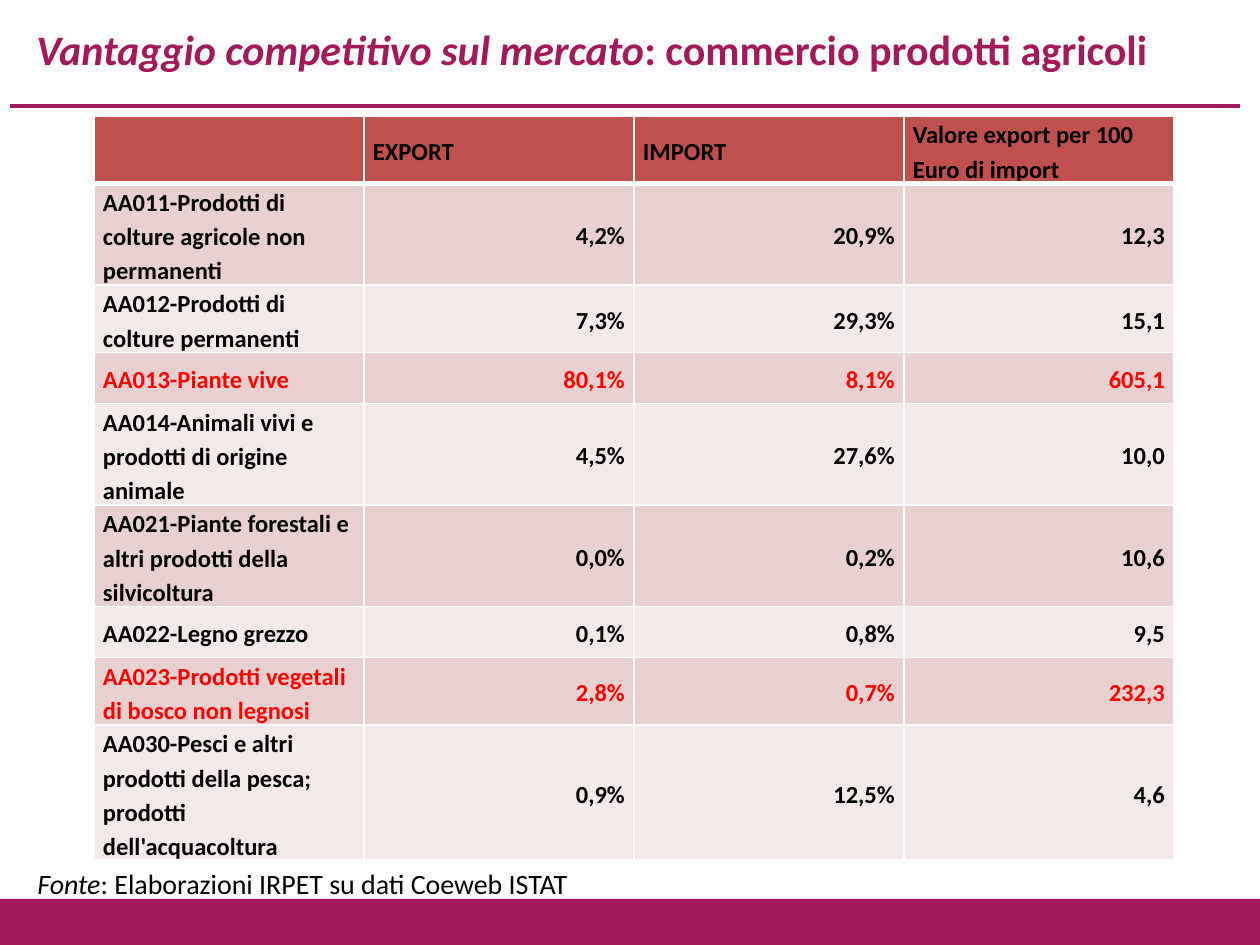
from typing import NamedTuple

import lxml.etree
import pptx
import pptx.dml.color
import pptx.enum.shapes
import pptx.enum.text
import pptx.oxml.ns
import pptx.util

EMU_PER_PX = 914400 / 126
MAGENTA = "A3195B"
BLACK = "000000"
RED = "FF0000"
WHITE = "FFFFFF"
HEADER_FILL = "C0504D"
BAND_FILLS = ("E8D0D0", "F4E9E9")
MIDDLE = pptx.enum.text.MSO_ANCHOR.MIDDLE
ALIGN = pptx.enum.text.PP_ALIGN


class Box(NamedTuple):
    left: int
    top: int
    width: int
    height: int


class Words(NamedTuple):
    text: str
    italic: bool = False


class Product(NamedTuple):
    name: str
    exports: str
    imports: str
    ratio: str
    color: str = BLACK


HEADINGS = ("", "EXPORT", "IMPORT", "Valore export per 100 Euro di import")
PRODUCTS = (
    Product("AA011-Prodotti di colture agricole non permanenti", "4,2%", "20,9%", "12,3"),
    Product("AA012-Prodotti di colture permanenti", "7,3%", "29,3%", "15,1"),
    Product("AA013-Piante vive", "80,1%", "8,1%", "605,1", RED),
    Product("AA014-Animali vivi e prodotti di origine animale", "4,5%", "27,6%", "10,0"),
    Product("AA021-Piante forestali e altri prodotti della silvicoltura", "0,0%", "0,2%", "10,6"),
    Product("AA022-Legno grezzo", "0,1%", "0,8%", "9,5"),
    Product("AA023-Prodotti vegetali di bosco non legnosi", "2,8%", "0,7%", "232,3", RED),
    Product("AA030-Pesci e altri prodotti della pesca; prodotti dell'acquacoltura", "0,9%", "12,5%", "4,6"),
)


def px(length: int) -> int:
    return round(length * EMU_PER_PX)


def rgb(color: str) -> pptx.dml.color.RGBColor:
    return pptx.dml.color.RGBColor.from_string(color)


def add_run(paragraph, words: Words, size: int, color: str, bold: bool) -> None:
    run = paragraph.add_run()
    run.text = words.text
    run.font.name = "Calibri"
    run.font.size = pptx.util.Pt(size)
    run.font.bold = bold
    run.font.italic = words.italic
    run.font.color.rgb = rgb(color)


def add_text(slide, box: Box, parts: tuple[Words, ...], size: int, color: str,
             bold: bool, wrap: bool, anchor) -> None:
    frame = slide.shapes.add_textbox(*map(px, box)).text_frame
    frame.word_wrap = wrap
    frame.vertical_anchor = anchor
    for part in parts:
        add_run(frame.paragraphs[0], part, size, color, bold)


def add_rule(slide, left: int, right: int, y: int) -> None:
    rule = slide.shapes.add_connector(
        pptx.enum.shapes.MSO_CONNECTOR.STRAIGHT, px(left), px(y), px(right), px(y))
    rule.line.color.rgb = rgb(MAGENTA)
    rule.line.width = pptx.util.Pt(2.5)
    lxml.etree.SubElement(rule.element.spPr, pptx.oxml.ns.qn("a:effectLst"))


def add_footer_band(slide, box: Box) -> None:
    band = slide.shapes.add_shape(
        pptx.enum.shapes.MSO_SHAPE.RECTANGLE, *map(px, box))
    band.shadow.inherit = False
    band.fill.solid()
    band.fill.fore_color.rgb = rgb(MAGENTA)
    band.line.fill.background()


def add_borders(cell, top: int, bottom: int) -> None:
    qn = pptx.oxml.ns.qn
    properties = cell._tc.get_or_add_tcPr()
    for side, points in (("L", 1), ("R", 1), ("T", top), ("B", bottom)):
        border = lxml.etree.SubElement(
            properties, qn(f"a:ln{side}"), w=str(pptx.util.Pt(points)))
        fill = lxml.etree.SubElement(border, qn("a:solidFill"))
        lxml.etree.SubElement(fill, qn("a:srgbClr"), val=WHITE)


def fill_cell(cell, text: str, color: str, fill: str, align) -> None:
    cell.fill.solid()
    cell.fill.fore_color.rgb = rgb(fill)
    cell.vertical_anchor = MIDDLE
    cell.margin_left = cell.margin_right = px(9)
    cell.margin_top = cell.margin_bottom = 0
    paragraph = cell.text_frame.paragraphs[0]
    paragraph.alignment = align
    paragraph.line_spacing = 1.15
    if text:
        add_run(paragraph, Words(text), 14, color, True)


def add_trade_table(slide, left: int, top: int, column_width: int, row_height: int) -> None:
    rows, columns = len(PRODUCTS) + 1, len(HEADINGS)
    table = slide.shapes.add_table(
        rows, columns, px(left), px(top),
        px(column_width * columns), px(row_height * rows)).table
    table.first_row = False
    table.horz_banding = False
    for column in table.columns:
        column.width = px(column_width)
    for row in table.rows:
        row.height = px(row_height)
    for c, heading in enumerate(HEADINGS):
        cell = table.cell(0, c)
        add_borders(cell, 1, 3)
        fill_cell(cell, heading, BLACK, HEADER_FILL, ALIGN.LEFT)
    for r, product in enumerate(PRODUCTS):
        values = (product.name, product.exports, product.imports, product.ratio)
        for c, value in enumerate(values):
            cell = table.cell(r + 1, c)
            add_borders(cell, 1 if r else 3, 1)
            fill_cell(cell, value, product.color, BAND_FILLS[r % 2],
                      ALIGN.RIGHT if c else ALIGN.LEFT)


def main() -> None:
    deck = pptx.Presentation()
    deck.slide_width = px(1260)
    deck.slide_height = px(945)
    slide = deck.slides.add_slide(deck.slide_layouts[6])
    add_rule(slide, 10, 1240, 106)
    add_footer_band(slide, Box(0, 899, 1260, 49))
    add_text(slide, Box(24, 0, 1162, 97),
             (Words("Vantaggio competitivo sul mercato", True),
              Words(": commercio prodotti agricoli")),
             24, MAGENTA, True, True, MIDDLE)
    add_trade_table(slide, 94, 116, 270, 51)
    add_text(slide, Box(25, 860, 563, 47),
             (Words("Fonte", True), Words(": Elaborazioni IRPET su dati Coeweb ISTAT")),
             16, BLACK, False, False, pptx.enum.text.MSO_ANCHOR.TOP)
    deck.save("out.pptx")


if __name__ == "__main__":
    main()
